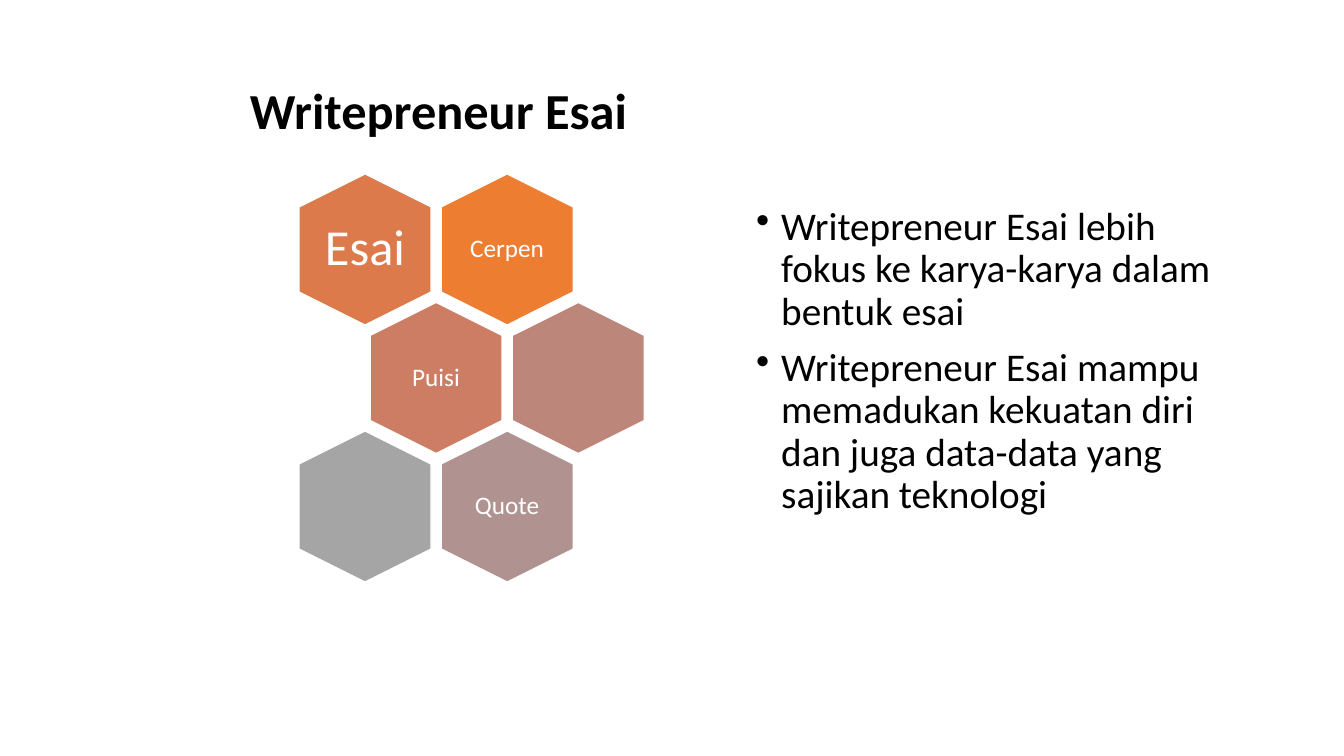
import pptx
import pptx.util
import pptx.dml.color
import pptx.enum.shapes
import pptx.enum.text
from lxml import etree

Inches, Pt = pptx.util.Inches, pptx.util.Pt
ALIGN, ANCHOR = pptx.enum.text.PP_ALIGN, pptx.enum.text.MSO_ANCHOR
HEXAGON = pptx.enum.shapes.MSO_SHAPE.HEXAGON


def color(value):
    return pptx.dml.color.RGBColor.from_string(value)


def add_text(page, area, lines, size, shade, bold=False, align=ALIGN.LEFT,
             anchor=ANCHOR.MIDDLE, inset=None, bullets=False):
    box = page.shapes.add_textbox(*[Inches(length) for length in area])
    frame = box.text_frame
    frame.word_wrap = True
    frame.vertical_anchor = anchor
    if inset is not None:
        frame.margin_left = frame.margin_right = Inches(inset)
        frame.margin_top = frame.margin_bottom = Inches(inset)
    for index, line in enumerate(lines):
        para = frame.add_paragraph() if index else frame.paragraphs[0]
        para.alignment = align
        para.line_spacing = 0.9
        if index:
            para.space_before = Pt(10)
        if bullets:
            settings = para._p.get_or_add_pPr()
            settings.set("marL", str(Inches(0.25)))
            settings.set("indent", str(Inches(-0.25)))
            tag = pptx.oxml.ns.qn("a:buChar")
            etree.SubElement(settings, tag).set("char", "•")
        span = para.add_run()
        span.text = line
        span.font.name = "Calibri"
        span.font.size = Pt(size)
        span.font.bold = bold
        span.font.color.rgb = color(shade)


deck = pptx.Presentation()
deck.slide_width, deck.slide_height = Inches(13.33), Inches(7.5)
page = deck.slides.add_slide(deck.slide_layouts[6])

# Title
add_text(page, (2.38, 0.4, 10.04, 1.45), ["Writepreneur Esai"], 36, "000000", bold=True)

# Honeycomb: columns are half a hexagon step apart, so odd rows shift by one
first_x, first_y = 3.62, 2.475
column_step, row_step = 0.705, 1.275
hex_length, hex_width = 1.5, 1.31
label_width, label_height = 0.9, 1.03

# column, row, fill, label, label size, label inset
cells = [
    (2, 0, "ED7D31", "Cerpen", 18, 0.07),
    (0, 0, "DC7A4B", "Esai", 36, 0),
    (1, 1, "CC7D64", "Puisi", 18, 0.07),
    (3, 1, "BD867B", "", 18, 0),
    (2, 2, "B09391", "Quote", 18, 0.07),
    (0, 2, "A5A5A5", "", 18, 0),
]
for column, row, fill, label, size, inset in cells:
    x = first_x + column * column_step
    y = first_y + row * row_step
    cell = page.shapes.add_shape(
        HEXAGON, Inches(x - hex_length / 2), Inches(y - hex_width / 2),
        Inches(hex_length), Inches(hex_width))
    cell.rotation = 90
    cell.adjustments[0] = 0.25
    cell.shadow.inherit = False
    cell.fill.solid()
    cell.fill.fore_color.rgb = color(fill)
    cell.line.color.rgb = color("FFFFFF")
    cell.line.width = Pt(1)
    if label:
        area = (x - label_width / 2, y - label_height / 2, label_width, label_height)
        add_text(page, area, [label], size, "FFFFFF", align=ALIGN.CENTER, inset=inset)

# Bullet points
points = [
    "Writepreneur Esai lebih fokus ke karya-karya dalam bentuk esai",
    "Writepreneur Esai mampu memadukan kekuatan diri dan juga data-data yang sajikan teknologi",
]
add_text(page, (7.4, 2, 5.02, 4.76), points, 28, "000000", anchor=ANCHOR.TOP, bullets=True)

deck.save("out.pptx")
